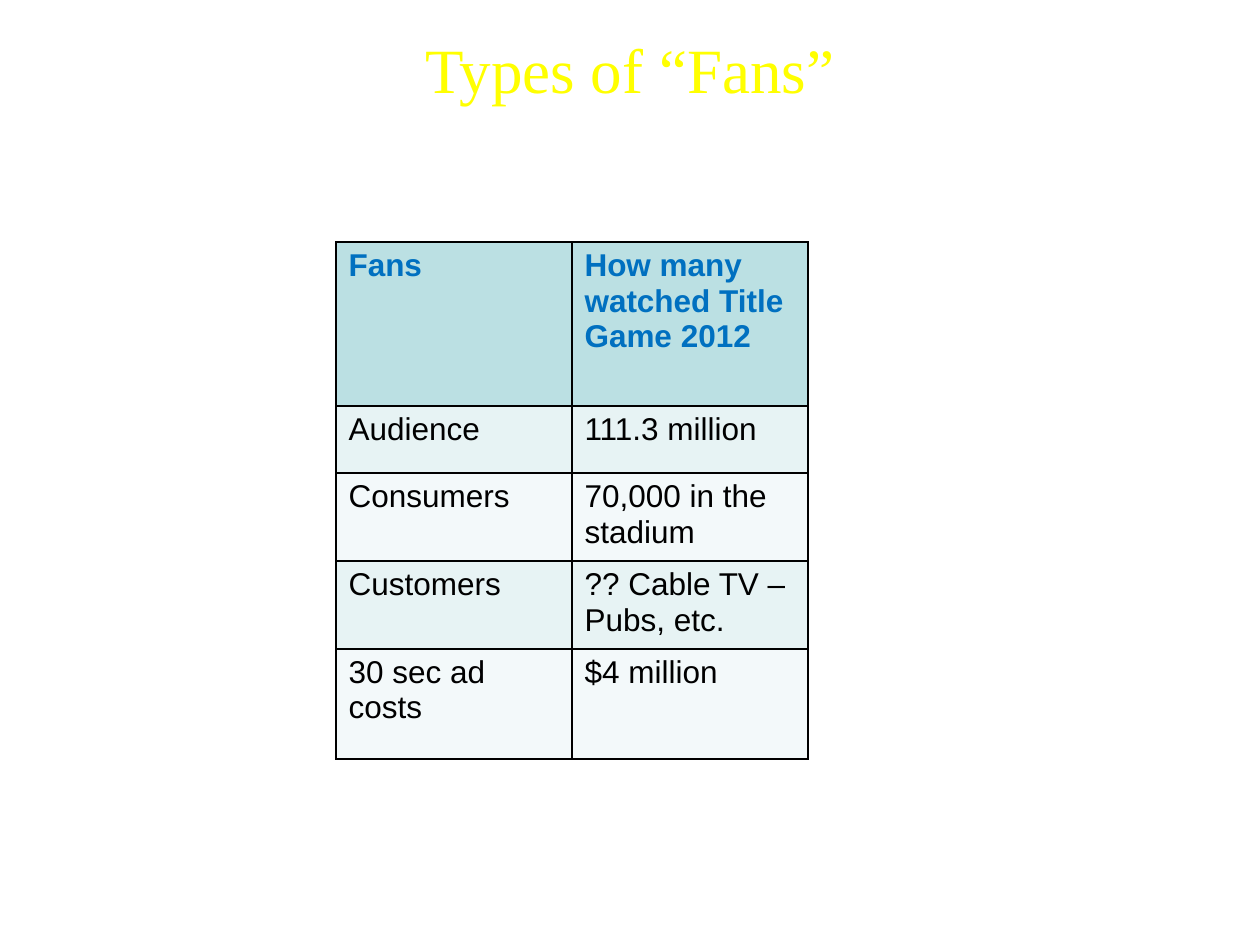
"""Build the slide on types of fans with a title and a two-column table."""
from dataclasses import dataclass

from lxml import etree
from pptx import Presentation
from pptx.dml.color import RGBColor
from pptx.enum.text import MSO_ANCHOR, PP_ALIGN
from pptx.oxml import parse_xml
from pptx.oxml.ns import nsdecls, qn
from pptx.util import Emu, Pt

CENTER = PP_ALIGN.CENTER
LEFT = PP_ALIGN.LEFT
MIDDLE = MSO_ANCHOR.MIDDLE
TOP = MSO_ANCHOR.TOP

EMU_PER_PX = 914400 / 126
TITLE_ONLY = 5
COLUMN_WIDTH = 236

YELLOW = RGBColor(0xFF, 0xFF, 0x00)
RED = RGBColor(0xC0, 0x00, 0x00)
BLUE = RGBColor(0x00, 0x70, 0xC0)
BLACK = RGBColor(0x00, 0x00, 0x00)
HEADER_FILL = RGBColor(0xBB, 0xE0, 0xE3)
ODD_FILL = RGBColor(0xE7, 0xF3, 0xF4)
EVEN_FILL = RGBColor(0xF3, 0xF9, 0xFA)


@dataclass(frozen=True)
class FanRow:
    """One table row with its height in px."""
    label: str
    value: str
    height: int


ROWS = (
    FanRow("Fans", "How many watched Title Game 2012", 164),
    FanRow("Audience", "111.3 million", 67),
    FanRow("Consumers", "70,000 in the stadium", 88),
    FanRow("Customers", "?? Cable TV – Pubs, etc.", 88),
    FanRow("30 sec ad costs", "$4 million", 110),
)


def px(length: int) -> Emu:
    """Turn px into EMU."""
    return Emu(round(length * EMU_PER_PX))


def line_xml(tag: str, color: RGBColor, width: float) -> etree._Element:
    """Return a solid line element of the given tag."""
    return parse_xml(
        f'<a:{tag} {nsdecls("a")} w="{Pt(width)}"><a:solidFill>'
        f'<a:srgbClr val="{color}"/></a:solidFill></a:{tag}>'
    )


def write_text(frame, text: str, *, font="Arial", size=18, color=BLACK,
               bold=False, align=LEFT, anchor=TOP):
    """Write one formatted paragraph and return its span."""
    frame.word_wrap = True
    frame.vertical_anchor = anchor
    para = frame.paragraphs[0]
    para.alignment = align
    span = para.add_run()
    span.text = text
    span.font.name = font
    span.font.size = Pt(size)
    span.font.bold = bold
    span.font.color.rgb = color
    return span


def add_outline_and_shadow(span) -> None:
    """Give the span a thin red outline and a black shadow."""
    properties = span.font._element
    properties.insert(0, line_xml("ln", RED, 0.75))
    shadow = parse_xml(
        f'<a:effectLst {nsdecls("a")}><a:outerShdw dist="38100" dir="2700000">'
        f'<a:srgbClr val="{BLACK}"/></a:outerShdw></a:effectLst>'
    )
    properties.find(qn("a:solidFill")).addnext(shadow)


def draw_title(page) -> None:
    """Fill and place the title placeholder."""
    title = page.shapes.title
    title.left, title.top = px(0), px(10)
    title.width, title.height = px(1260), px(116)
    span = write_text(title.text_frame, "Types of “Fans”", font="Times New Roman",
                      size=36, color=YELLOW, align=CENTER, anchor=MIDDLE)
    add_outline_and_shadow(span)


def draw_cell(cell, text: str, fill: RGBColor, is_header: bool) -> None:
    """Write, fill and border one table cell."""
    write_text(cell.text_frame, text, color=BLUE if is_header else BLACK, bold=is_header)
    cell.fill.solid()
    cell.fill.fore_color.rgb = fill
    properties = cell._tc.get_or_add_tcPr()
    for position, tag in enumerate(("lnL", "lnR", "lnT", "lnB")):
        properties.insert(position, line_xml(tag, BLACK, 1))


def draw_table(page, rows: tuple[FanRow, ...]) -> None:
    """Draw the table of fans."""
    height = sum(row.height for row in rows)
    table = page.shapes.add_table(len(rows), 2, px(336), px(242),
                                  px(2 * COLUMN_WIDTH), px(height)).table
    for column in table.columns:
        column.width = px(COLUMN_WIDTH)
    for index, row in enumerate(rows):
        table.rows[index].height = px(row.height)
        is_header = index == 0
        fill = HEADER_FILL if is_header else ODD_FILL if index % 2 else EVEN_FILL
        for column_index, text in enumerate((row.label, row.value)):
            draw_cell(table.cell(index, column_index), text, fill, is_header)


def main() -> None:
    """Build and save the deck."""
    deck = Presentation()
    deck.slide_width, deck.slide_height = px(1260), px(945)
    page = deck.slides.add_slide(deck.slide_layouts[TITLE_ONLY])
    draw_title(page)
    draw_table(page, ROWS)
    deck.save("out.pptx")


if __name__ == "__main__":
    main()
